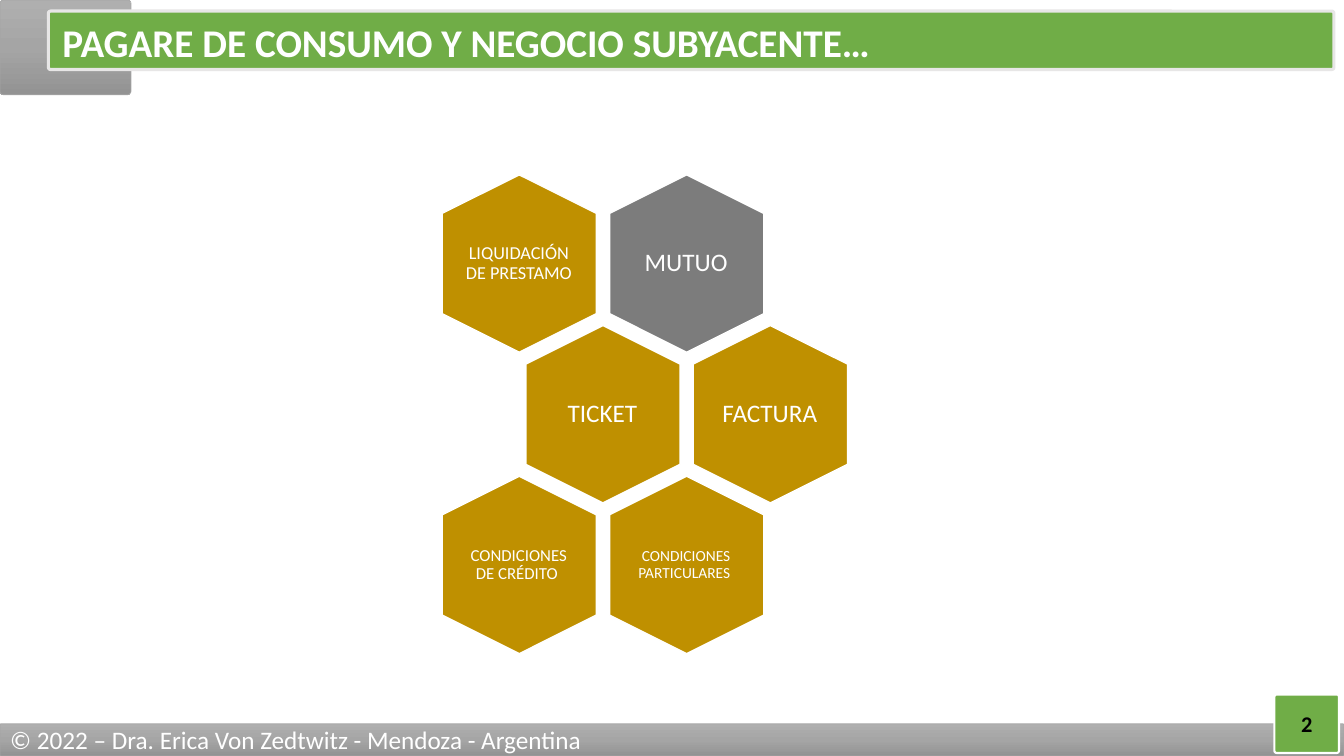
from copy import deepcopy
from dataclasses import dataclass

from pptx import Presentation
from pptx.dml.color import RGBColor
from pptx.enum.shapes import MSO_SHAPE
from pptx.enum.text import MSO_ANCHOR, PP_ALIGN
from pptx.oxml.ns import qn
from pptx.shapes.autoshape import Shape
from pptx.slide import Slide
from pptx.util import Inches, Pt

WHITE = RGBColor(0xFF, 0xFF, 0xFF)
BLACK = RGBColor(0x00, 0x00, 0x00)
GREEN = RGBColor(0x70, 0xAD, 0x47)
PALE = RGBColor(0xE7, 0xE6, 0xE6)
GOLD = RGBColor(0xBF, 0x90, 0x00)
SLATE = RGBColor(0x7C, 0x7C, 0x7C)
SILVER = RGBColor(0xA5, 0xA5, 0xA5)
SILVER_LIGHT = RGBColor(0xAF, 0xAF, 0xAF)
SILVER_DARK = RGBColor(0x93, 0x93, 0x93)
FONT = "Calibri"

GRID_LEFT, GRID_TOP = 4.27, 1.85
COLUMN_STEP, ROW_STEP = 1.66, 1.495
HEXAGON_WIDTH, HEXAGON_HEIGHT = 1.76, 1.53
LABEL_LEFT, LABEL_TOP = 0.35, 0.16
LABEL_WIDTH, LABEL_HEIGHT = 1.05, 1.21


@dataclass(frozen=True)
class Panel:
    left: float
    top: float
    width: float
    height: float
    line: RGBColor
    line_width: float
    fill: RGBColor | None = None


@dataclass(frozen=True)
class Cell:
    text: str
    row: int
    column: int
    size: float
    inset: float = 0
    fill: RGBColor = GOLD


CORNER = Panel(0, 0, 1.3, 0.94, SILVER, 0.5)
TITLE_BAR = Panel(0.48, 0.11, 12.75, 0.58, PALE, 2.25, GREEN)
FOOTER = Panel(0, 7.18, 13.33, 0.32, SILVER, 0.5)
PAGE_NUMBER = Panel(12.64, 6.89, 0.64, 0.58, WHITE, 1.5, GREEN)

CELLS = [
    Cell("MUTUO", 0, 1, 18, 0.07, SLATE),
    Cell("LIQUIDACIÓN DE PRESTAMO", 0, 0, 13),
    Cell("TICKET", 1, 0, 18, 0.07),
    Cell("FACTURA", 1, 1, 18),
    Cell("CONDICIONES PARTICULARES ", 2, 1, 11, 0.05),
    Cell("CONDICIONES DE CRÉDITO ", 2, 0, 12),
]


def write(box: Shape, text: str, *, size: float, color: RGBColor = WHITE,
          bold: bool = False, align: PP_ALIGN = PP_ALIGN.LEFT,
          spacing: float = 1.0, inset: float | None = None) -> None:
    frame = box.text_frame
    frame.word_wrap = True
    frame.vertical_anchor = MSO_ANCHOR.MIDDLE
    if inset is not None:
        frame.margin_left = frame.margin_right = Inches(inset)
        frame.margin_top = frame.margin_bottom = Inches(inset)
    para = frame.paragraphs[0]
    para.alignment = align
    para.line_spacing = spacing
    span = para.add_run()
    span.text = text
    span.font.name = FONT
    span.font.size = Pt(size)
    span.font.bold = bold
    span.font.color.rgb = color


def fill_silver(box: Shape) -> None:
    box.fill.gradient()
    box.fill.gradient_angle = 270
    stops = box._element.spPr.find(".//" + qn("a:gsLst"))
    middle = deepcopy(stops[0])
    stops.insert(1, middle)
    colors = (SILVER_LIGHT, SILVER, SILVER_DARK)
    for stop, color, position in zip(box.fill.gradient_stops, colors, (0, 0.5, 1)):
        stop.color.rgb = color
        stop.position = position


def draw_panel(page: Slide, panel: Panel) -> Shape:
    box = page.shapes.add_shape(
        MSO_SHAPE.ROUNDED_RECTANGLE, Inches(panel.left), Inches(panel.top),
        Inches(panel.width), Inches(panel.height))
    box.adjustments[0] = 0.038
    box.shadow.inherit = False
    if panel.fill is None:
        fill_silver(box)
    else:
        box.fill.solid()
        box.fill.fore_color.rgb = panel.fill
    box.line.color.rgb = panel.line
    box.line.width = Pt(panel.line_width)
    return box


def draw_cell(page: Slide, cell: Cell) -> None:
    left = GRID_LEFT + COLUMN_STEP * (cell.column + cell.row % 2 / 2)
    top = GRID_TOP + ROW_STEP * cell.row
    hexagon = page.shapes.add_shape(
        MSO_SHAPE.HEXAGON, Inches(left), Inches(top),
        Inches(HEXAGON_WIDTH), Inches(HEXAGON_HEIGHT))
    hexagon.rotation = 90
    hexagon.shadow.inherit = False
    hexagon.fill.solid()
    hexagon.fill.fore_color.rgb = cell.fill
    hexagon.line.color.rgb = WHITE
    hexagon.line.width = Pt(1)
    label = page.shapes.add_textbox(
        Inches(left + LABEL_LEFT), Inches(top + LABEL_TOP),
        Inches(LABEL_WIDTH), Inches(LABEL_HEIGHT))
    write(label, cell.text, size=cell.size, align=PP_ALIGN.CENTER,
          spacing=0.9, inset=cell.inset)


def main() -> None:
    deck = Presentation()
    deck.slide_width = Inches(13.33)
    deck.slide_height = Inches(7.5)
    page = deck.slides.add_slide(deck.slide_layouts[6])

    draw_panel(page, CORNER)
    draw_panel(page, TITLE_BAR)
    write(draw_panel(page, FOOTER),
          "© 2022 – Dra. Erica Von Zedtwitz - Mendoza - Argentina", size=18)
    write(draw_panel(page, PAGE_NUMBER), "2", size=16, color=BLACK,
          bold=True, align=PP_ALIGN.CENTER)

    for cell in CELLS:
        draw_cell(page, cell)

    title = page.shapes.add_textbox(
        Inches(0.52), Inches(0.2), Inches(12.7), Inches(0.49))
    write(title, "PAGARE DE CONSUMO Y NEGOCIO SUBYACENTE…", size=28,
          bold=True, spacing=0.9)
    deck.save("out.pptx")


if __name__ == "__main__":
    main()
